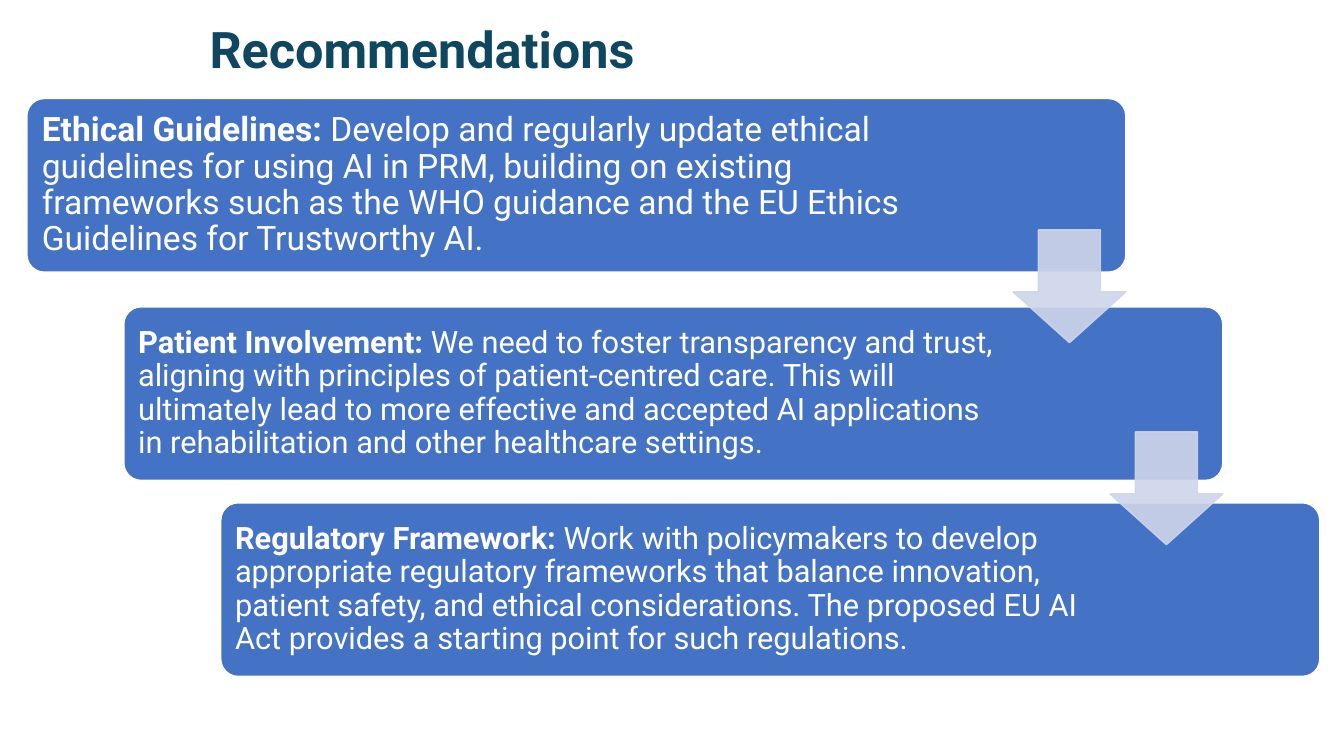
"""Build the Recommendations slide: three stepped cards linked by down arrows."""
import dataclasses

import lxml.etree
import pptx
import pptx.dml.color
import pptx.enum.shapes
import pptx.enum.text
import pptx.oxml.ns
import pptx.util

Pt = pptx.util.Pt
Shapes = pptx.enum.shapes.MSO_SHAPE
Anchor = pptx.enum.text.MSO_ANCHOR


@dataclasses.dataclass(frozen=True)
class Theme:
    font: str = "Roboto"
    title_color: str = "0F4761"
    card_color: str = "4472C4"
    arrow_color: str = "CFD5EA"
    white: str = "FFFFFF"
    title_size: float = 36
    lead_size: float = 24
    body_size: float = 22


THEME = Theme()
CARD_LEFT, CARD_STEP = 19.2, 69.25
CARD_WIDTH, CARD_HEIGHT = 785, 124
CARD_PADDING = 3.6
ARROW_SIZE = 80.6
ARROW_TOPS = (164.2, 308.5)

CARDS = (
    (70.4, 651.6, 7.2, THEME.lead_size, "Ethical Guidelines: ",
     "Develop and regularly update ethical guidelines for using AI in PRM, "
     "building on existing frameworks such as the WHO guidance and the EU "
     "Ethics Guidelines for Trustworthy AI."),
    (219.2, 627.8, 6.6, THEME.body_size, "Patient Involvement: ",
     "We need to foster transparency and trust, aligning with principles of "
     "patient-centred care. This will ultimately lead to more effective and "
     "accepted AI applications in rehabilitation and other healthcare settings."),
    (359.2, 627.8, 6.6, THEME.body_size, "Regulatory Framework: ",
     "Work with policymakers to develop appropriate regulatory frameworks that "
     "balance innovation, patient safety, and ethical considerations. The "
     "proposed EU AI Act provides a starting point for such regulations."),
)


def rgb(color):
    return pptx.dml.color.RGBColor.from_string(color)


def style_font(font, size, color):
    font.name = THEME.font
    font.size = Pt(size)
    font.color.rgb = rgb(color)


def add_block(page, kind, left, top, width, height, fill, line, adjustments):
    block = page.shapes.add_shape(kind, Pt(left), Pt(top), Pt(width), Pt(height))
    block.shadow.inherit = False
    block.fill.solid()
    block.fill.fore_color.rgb = rgb(fill)
    block.line.color.rgb = rgb(line)
    block.line.width = Pt(1)
    for index, value in enumerate(adjustments):
        block.adjustments[index] = value
    return block


def add_text(page, left, top, width, height):
    box = page.shapes.add_textbox(Pt(left), Pt(top), Pt(width), Pt(height))
    box.text_frame.word_wrap = True
    return box.text_frame


def add_title(page, text):
    para = add_text(page, 142.6, 9.4, 573.1, 51.1).paragraphs[0]
    para.text = text
    style_font(para.font, THEME.title_size, THEME.title_color)
    para.font.bold = True


def add_card(page, left, top, text_width, inset, size, heading, body):
    add_block(page, Shapes.ROUNDED_RECTANGLE, left, top, CARD_WIDTH, CARD_HEIGHT,
              THEME.card_color, THEME.white, (0.1,))
    frame = add_text(page, left + CARD_PADDING, top + CARD_PADDING,
                     text_width, CARD_HEIGHT - 2 * CARD_PADDING)
    frame.vertical_anchor = Anchor.MIDDLE
    frame.margin_left = frame.margin_right = Pt(inset)
    frame.margin_top = frame.margin_bottom = Pt(inset)
    para = frame.paragraphs[0]
    para.line_spacing = 0.9
    style_font(para.font, size, THEME.white)
    for text, bold in ((heading, True), (body, False)):
        span = para.add_run()
        span.text = text
        span.font.bold = bold


def add_arrow(page, left, top):
    arrow = add_block(page, Shapes.DOWN_ARROW, left, top, ARROW_SIZE, ARROW_SIZE,
                      THEME.arrow_color, THEME.arrow_color, (0.55, 0.45))
    tag = pptx.oxml.ns.qn("a:srgbClr")
    for color in arrow.fill._xPr.iter(tag):
        lxml.etree.SubElement(color, pptx.oxml.ns.qn("a:alpha"), val="90000")


def main():
    deck = pptx.Presentation()
    deck.slide_width, deck.slide_height = Pt(960), Pt(540)
    page = deck.slides.add_slide(deck.slide_layouts[6])
    for index, (top, *content) in enumerate(CARDS):
        add_card(page, CARD_LEFT + index * CARD_STEP, top, *content)
    for index, top in enumerate(ARROW_TOPS):
        card_right = CARD_LEFT + index * CARD_STEP + CARD_WIDTH
        add_arrow(page, card_right - ARROW_SIZE, top)
    add_title(page, "Recommendations")
    deck.save("out.pptx")


if __name__ == "__main__":
    main()
